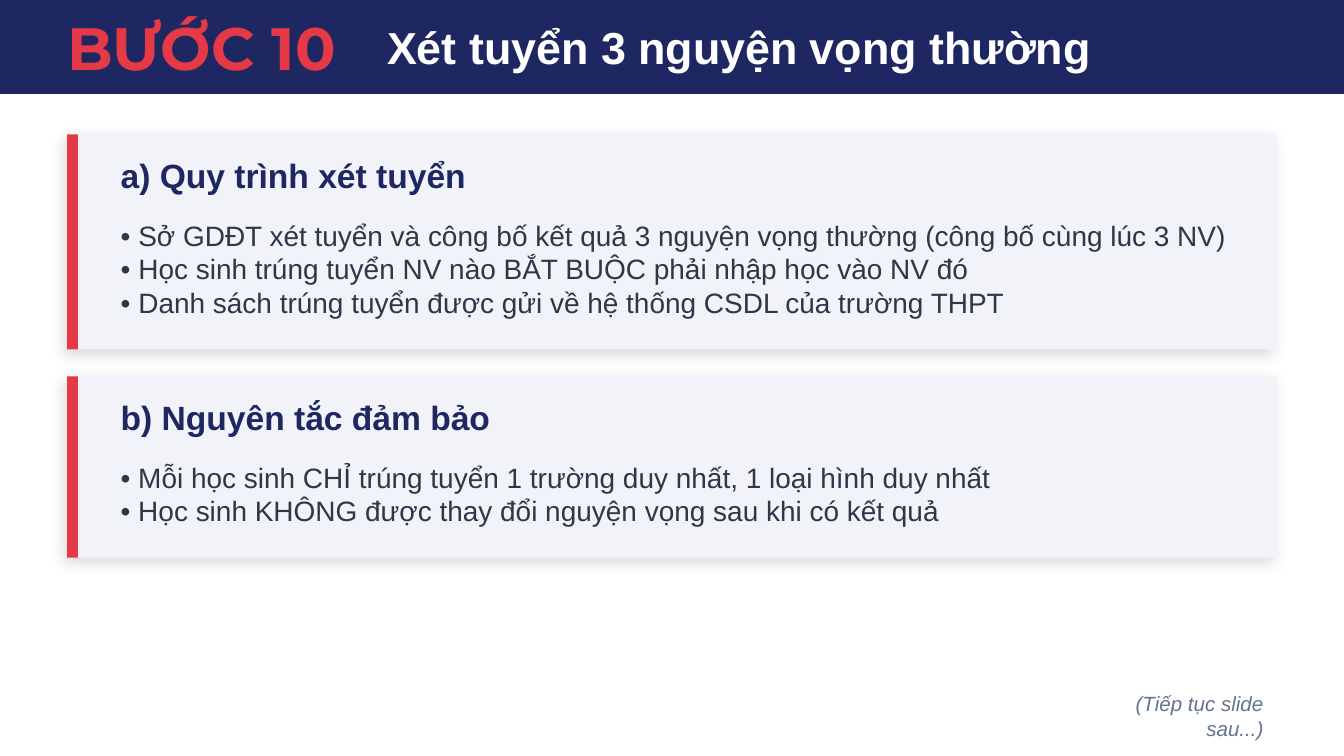
from dataclasses import dataclass
from lxml.etree import SubElement as Sub
from pptx import Presentation as Deck
from pptx.dml.color import RGBColor as Rgb
from pptx.enum.shapes import MSO_SHAPE as Kind
from pptx.enum.text import MSO_ANCHOR as Anchor, PP_ALIGN as Align
from pptx.oxml.ns import qn
from pptx.util import Pt

SCALE = 4572


@dataclass(frozen=True)
class Theme:
    navy: str = "1E2761"
    red: str = "E63946"
    white: str = "FFFFFF"
    pale: str = "F1F3F9"
    ink: str = "2D3748"
    grey: str = "64748B"
    step: int = 32
    title: int = 24
    head: int = 18
    body: int = 15
    note: int = 11
    sans: str = "Arial"
    brand: str = "Montserrat"


class Page:
    def __init__(self, deck, theme):
        self.theme = theme
        self.slide = deck.slides.add_slide(deck.slide_layouts[6])

    def rect(self, box, color, shade=False):
        shape = self.slide.shapes.add_shape(Kind.RECTANGLE, *(n * SCALE for n in box))
        shape.shadow.inherit = False
        shape.fill.solid()
        shape.fill.fore_color.rgb = Rgb.from_string(color)
        shape.line.fill.background()
        if shade:
            self.shade(shape)

    def shade(self, shape):
        effects = shape._element.spPr.find(qn("a:effectLst"))
        outer = Sub(effects, qn("a:outerShdw"), blurRad=str(Pt(8)), dist=str(Pt(3)),
                    dir=str(135 * 60000), algn="bl", rotWithShape="0")
        black = Sub(outer, qn("a:srgbClr"), val="000000")
        Sub(black, qn("a:alpha"), val="15000")

    def text(self, box, lines, size, color, inset=True, align=Align.LEFT, **style):
        frame = self.slide.shapes.add_textbox(*(n * SCALE for n in box)).text_frame
        frame.word_wrap = True
        frame.vertical_anchor = Anchor.MIDDLE
        if not inset:
            for side in ("left", "top", "right", "bottom"):
                setattr(frame, f"margin_{side}", 0)
        look = {"name": self.theme.sans, "size": Pt(size), **style}
        for i, line in enumerate(lines):
            para = frame.add_paragraph() if i else frame.paragraphs[0]
            para.alignment = align
            run = para.add_run()
            run.text = line
            for key, value in look.items():
                setattr(run.font, key, value)
            run.font.color.rgb = Rgb.from_string(color)

    def card(self, top, tall, wide, head, lines):
        look = self.theme
        self.rect((100, top, 1800, tall), look.pale, shade=True)
        self.rect((100, top, 16, tall), look.red)
        self.text((160, top + 30, 1680, 60), [head], look.head, look.navy, bold=True)
        self.text((160, top + 100, wide, tall - 120), lines, look.body, look.ink)


def main():
    deck = Deck()
    deck.slide_width, deck.slide_height = 2000 * SCALE, 1125 * SCALE
    look = Theme()
    page = Page(deck, look)
    page.rect((0, 0, 2000, 140), look.navy)
    page.text((100, 20, 500, 100), ["BƯỚC 10"], look.step, look.red,
              inset=False, name=look.brand, bold=True)
    page.text((576, 30, 1324, 80), ["Xét tuyển 3 nguyện vọng thường"],
              look.title, look.white, inset=False, bold=True)
    page.card(200, 320, 1730, "a) Quy trình xét tuyển", [
        "• Sở GDĐT xét tuyển và công bố kết quả 3 nguyện vọng thường (công bố cùng lúc 3 NV)",
        "• Học sinh trúng tuyển NV nào BẮT BUỘC phải nhập học vào NV đó",
        "• Danh sách trúng tuyển được gửi về hệ thống CSDL của trường THPT",
    ])
    page.card(560, 270, 1680, "b) Nguyên tắc đảm bảo", [
        "• Mỗi học sinh CHỈ trúng tuyển 1 trường duy nhất, 1 loại hình duy nhất",
        "• Học sinh KHÔNG được thay đổi nguyện vọng sau khi có kết quả",
    ])
    page.text((1600, 1040, 300, 50), ["(Tiếp tục slide sau...)"],
              look.note, look.grey, align=Align.RIGHT, italic=True)
    deck.save("out.pptx")


if __name__ == "__main__":
    main()
